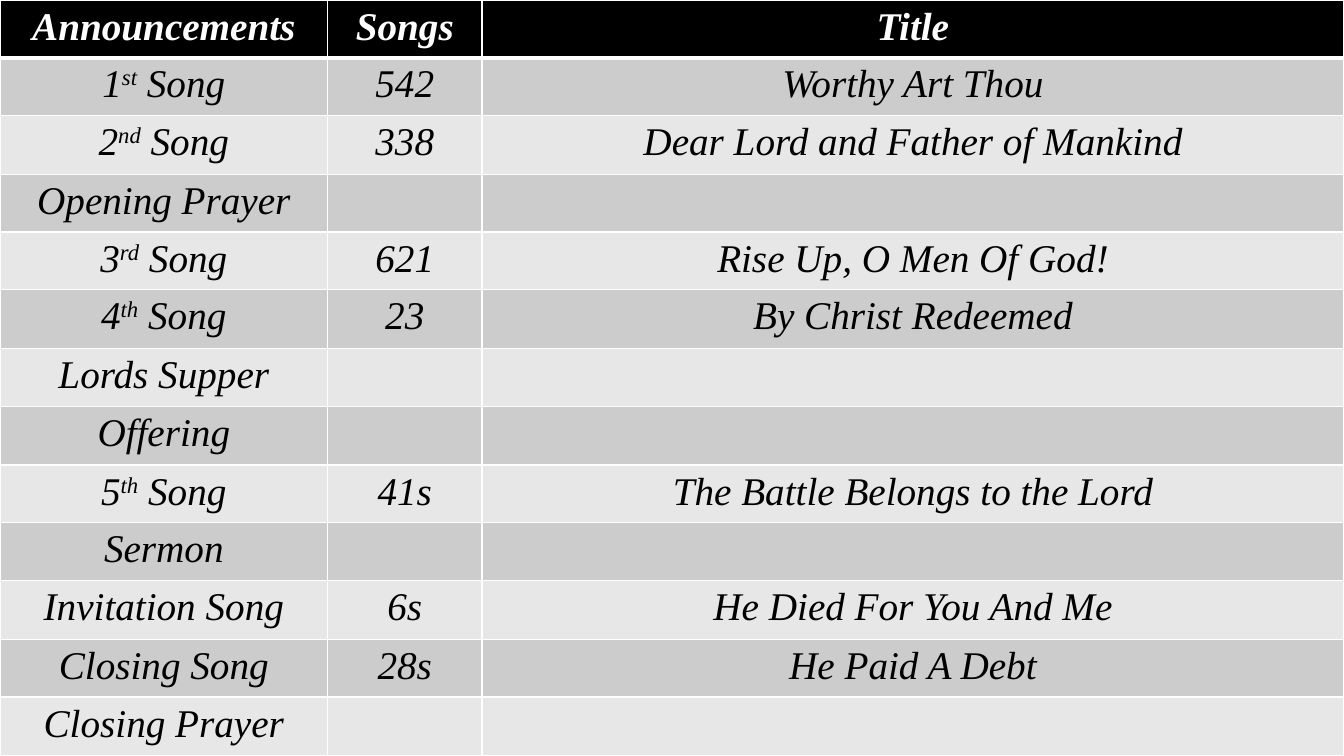
import dataclasses

import lxml.etree
import pptx
import pptx.dml.color
import pptx.enum.text
import pptx.oxml.ns
import pptx.util

SCALE = 9525
SLIDE_WIDTH, SLIDE_HEIGHT = 1280, 720
COLUMN_WIDTHS = (312, 147, 821)
SUPERSCRIPT_MARK = "^"

HEADINGS = ("Announcements", "Songs", "Title")
PROGRAM = (
    ("1^st^ Song", "542", "Worthy Art Thou"),
    ("2^nd^ Song", "338", "Dear Lord and Father of Mankind"),
    ("Opening Prayer", "", ""),
    ("3^rd^ Song", "621", "Rise Up, O Men Of God!"),
    ("4^th^ Song", "23", "By Christ Redeemed"),
    ("Lords Supper", "", ""),
    ("Offering", "", ""),
    ("5^th^ Song", "41s", "The Battle Belongs to the Lord"),
    ("Sermon", "", ""),
    ("Invitation Song", "6s", "He Died For You And Me"),
    ("Closing Song", "28s", "He Paid A Debt"),
    ("Closing Prayer", "", ""),
)


@dataclasses.dataclass(frozen=True)
class Theme:
    font: str = "Times New Roman"
    size: int = 28
    heading_fill: str = "000000"
    heading_text: str = "FFFFFF"
    body_fills: tuple = ("CCCCCC", "E7E7E7")
    body_text: str = "000000"
    border: str = "FFFFFF"
    thin_border: int = 1
    thick_border: int = 3


THEME = Theme()


def px(length):
    return pptx.util.Emu(length * SCALE)


def rgb(color):
    return pptx.dml.color.RGBColor.from_string(color)


def add_border(cell, side, width):
    qualified = pptx.oxml.ns.qn
    properties = cell._tc.get_or_add_tcPr()
    line = lxml.etree.SubElement(properties, qualified(f"a:ln{side}"))
    line.set("w", str(pptx.util.Pt(width)))
    fill = lxml.etree.SubElement(line, qualified("a:solidFill"))
    lxml.etree.SubElement(fill, qualified("a:srgbClr")).set("val", THEME.border)


def write_text(cell, text, color, bold):
    paragraph = cell.text_frame.paragraphs[0]
    paragraph.alignment = pptx.enum.text.PP_ALIGN.CENTER
    font = paragraph.font
    font.name = THEME.font
    font.size = pptx.util.Pt(THEME.size)
    font.italic = True
    font.bold = bold
    font.color.rgb = rgb(color)
    if not text:
        return
    for index, part in enumerate(text.split(SUPERSCRIPT_MARK)):
        run = paragraph.add_run()
        run.text = part
        if index % 2:
            run.font._element.set("baseline", "30000")


def fill_cell(cell, text, row_index):
    is_heading = row_index == 0
    top = THEME.thick_border if row_index == 1 else THEME.thin_border
    bottom = THEME.thick_border if is_heading else THEME.thin_border
    for side, width in (("L", THEME.thin_border), ("R", THEME.thin_border), ("T", top), ("B", bottom)):
        add_border(cell, side, width)
    body_fill = THEME.body_fills[(row_index - 1) % 2]
    cell.fill.solid()
    cell.fill.fore_color.rgb = rgb(THEME.heading_fill if is_heading else body_fill)
    write_text(cell, text, THEME.heading_text if is_heading else THEME.body_text, is_heading)


def add_program_table(slide):
    rows = (HEADINGS, *PROGRAM)
    table = slide.shapes.add_table(
        len(rows), len(HEADINGS), 0, 0, px(SLIDE_WIDTH), px(SLIDE_HEIGHT)
    ).table
    for column, width in zip(table.columns, COLUMN_WIDTHS):
        column.width = px(width)
    for row_index, texts in enumerate(rows):
        row_top = SLIDE_HEIGHT * row_index // len(rows)
        row_bottom = SLIDE_HEIGHT * (row_index + 1) // len(rows)
        table.rows[row_index].height = px(row_bottom - row_top)
        for column_index, text in enumerate(texts):
            fill_cell(table.cell(row_index, column_index), text, row_index)


def main():
    presentation = pptx.Presentation()
    presentation.slide_width = px(SLIDE_WIDTH)
    presentation.slide_height = px(SLIDE_HEIGHT)
    slide = presentation.slides.add_slide(presentation.slide_layouts[6])
    add_program_table(slide)
    presentation.save("out.pptx")


if __name__ == "__main__":
    main()
